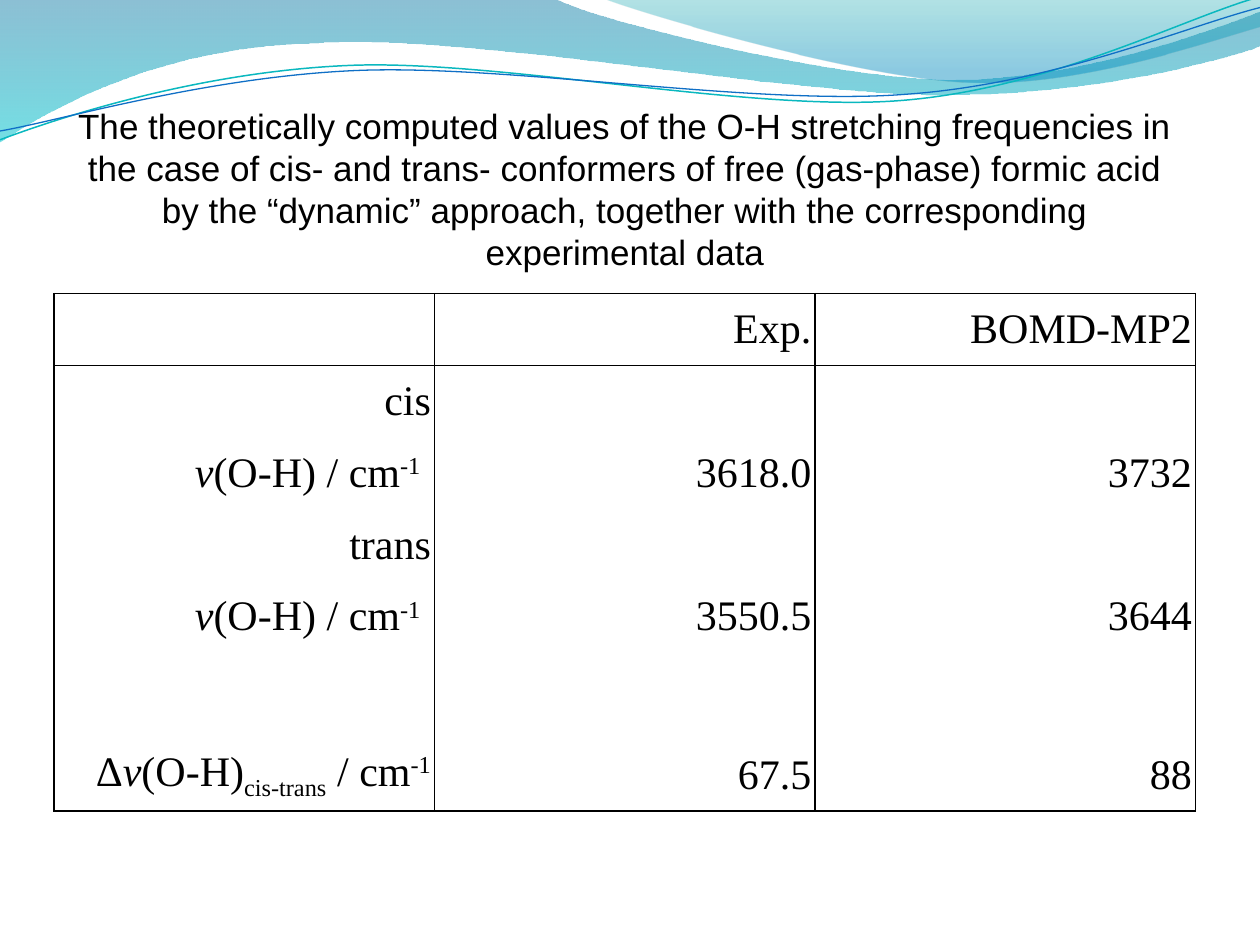
"""Build a slide with a wave header, a title and a table of O-H stretching frequencies."""
from lxml import etree
from pptx import Presentation
from pptx.dml.color import RGBColor
from pptx.enum.text import MSO_ANCHOR, MSO_AUTO_SIZE, PP_ALIGN
from pptx.oxml.ns import qn
from pptx.util import Inches, Pt

TOP, MIDDLE = MSO_ANCHOR.TOP, MSO_ANCHOR.MIDDLE
CENTER, RIGHT = PP_ALIGN.CENTER, PP_ALIGN.RIGHT
NO_AUTOFIT = MSO_AUTO_SIZE.NONE
BLACK = "000000"


def color(hex_string):
    """Turn a hex string into a colour."""
    return RGBColor.from_string(hex_string)


def add_wave(slide, start, segments, close):
    """Add an outline of lines (x, y) and cubic curves (six numbers), in inches."""
    corners = [(Inches(segment[i]), Inches(segment[i + 1]))
               for segment in segments for i in range(0, len(segment), 2)]
    builder = slide.shapes.build_freeform(Inches(start[0]), Inches(start[1]))
    builder.add_line_segments(corners, close=close)
    shape = builder.convert_to_shape()
    shape.shadow.inherit = False
    steps = iter(list(shape._element.iter(qn("a:lnTo"))))
    for segment in segments:
        first = next(steps)
        if len(segment) == 6:
            curve = etree.Element(qn("a:cubicBezTo"))
            first.addprevious(curve)
            for step in (first, next(steps), next(steps)):
                curve.append(step[0])
                step.getparent().remove(step)
    return shape


presentation = Presentation()
presentation.slide_width, presentation.slide_height = Inches(10), Inches(7.5)
slide = presentation.slides.add_slide(presentation.slide_layouts[5])
slide.background.fill.solid()
slide.background.fill.fore_color.rgb = color("FFFFFF")

filled_waves = [
    ((0, 0), [(4.4, -0.01), (4.76, 0.17, 6.64, 0.63, 7.58, 0.63),
              (8.53, 0.63, 9.58, 0.26, 10, 0.09), (10.01, 0.36),
              (9.83, 0.44, 8.7, 0.76, 7.46, 0.75), (6.22, 0.75, 3.82, 0.28, 2.57, 0.34),
              (1.29, 0.36, 0.46, 0.83, -0.01, 1.13)],
     [(0, "0074A1", 45), (1, "00C6CF", 55)]),
    ((4.79, -0.01), [(5.09, 0.11, 6.82, 0.62, 7.69, 0.65),
                     (8.56, 0.69, 9.61, 0.32, 10, 0.21), (10, 0)],
     [(0, "00A1A9", 30), (0.8, "008BBF", 45)]),
]
for start, segments, stops in filled_waves:
    wave = add_wave(slide, start, segments, True)
    wave.line.fill.background()
    wave.fill.gradient()
    wave.fill.gradient_angle = 270
    for stop, (position, hex_string, opacity) in zip(wave.fill.gradient_stops, stops):
        stop.position = position
        stop.color.rgb = color(hex_string)
    stop_colors = wave._element.spPr.iter(qn("a:srgbClr"))
    for stop_color, (position, hex_string, opacity) in zip(stop_colors, stops):
        etree.SubElement(stop_color, qn("a:alpha"), val=str(opacity * 1000))

line_waves = [
    ((0, 1.11), [(0.48, 0.93, 1.58, 0.57, 2.77, 0.52), (3.95, 0.47, 5.93, 0.89, 7.13, 0.8),
                 (8.33, 0.71, 9.38, 0.15, 9.98, -0.02)], "0AB8BF", 0.85),
    ((0, 1.04), [(0.47, 0.96, 1.64, 0.61, 2.83, 0.56), (4.03, 0.51, 5.97, 0.84, 7.17, 0.75),
                 (8.36, 0.67, 9.41, 0.21, 10, 0.06)], "0F6FC6", 0.75),
]
for start, segments, hex_string, width in line_waves:
    wave = add_wave(slide, start, segments, False)
    wave.fill.background()
    wave.line.color.rgb = color(hex_string)
    wave.line.width = Pt(width)

title = slide.shapes.title
title.left, title.top = Inches(0.43), Inches(0.77)
title.width, title.height = Inches(9.06), Inches(1.78)
title_frame = title.text_frame
title_frame.text = (
    "The theoretically computed values of the O-H stretching frequencies in the case of "
    "cis- and trans- conformers of free (gas-phase) formic acid by the “dynamic” approach, "
    "together with the corresponding experimental data")
title_frame.word_wrap = True
title_frame.auto_size = NO_AUTOFIT
title_frame.vertical_anchor = TOP
title_frame.margin_top = Inches(0.06)
paragraph = title_frame.paragraphs[0]
paragraph.alignment = CENTER
paragraph.line_spacing = Pt(24)
paragraph.font.size = Pt(20)
paragraph.font.name = "Arial"
paragraph.font.color.rgb = color(BLACK)

frequency = [("v", "italic"), ("(O-H) / cm", ""), ("-1", "super"), (" ", "")]
difference = [("Δ", ""), ("v", "italic"), ("(O-H)", ""), ("cis-trans", "sub"),
              (" / cm", ""), ("-1", "super")]
rows = [
    ([], "Exp.", "BOMD-MP2"),
    ([("cis", "")], "", ""),
    (frequency, "3618.0", "3732"),
    ([("trans", "")], "", ""),
    (frequency, "3550.5", "3644"),
    ([], "", ""),
    (difference, "67.5", "88"),
]
baselines = {"super": "30000", "sub": "-25000"}
last_row = len(rows) - 1
table = slide.shapes.add_table(len(rows), 3, Inches(0.43), Inches(2.33),
                               Inches(9.06), Inches(4.09)).table
table.first_row = table.horz_banding = False
for column in table.columns:
    column.width = Inches(3.02)
for row_index, (label, experiment, computed) in enumerate(rows):
    table.rows[row_index].height = Inches(0.69 if row_index == 5 else 0.57)
    ruled = {"L": True, "R": True, "T": row_index <= 1, "B": row_index in (0, last_row)}
    for column_index, runs in enumerate((label, [(experiment, "")], [(computed, "")])):
        cell = table.cell(row_index, column_index)
        cell.margin_left = cell.margin_right = Inches(0.03)
        cell.margin_top = cell.margin_bottom = 0
        cell.vertical_anchor = MIDDLE
        cell_properties = cell._tc.get_or_add_tcPr()
        for side, drawn in ruled.items():
            border = etree.SubElement(cell_properties, qn(f"a:ln{side}"), w=str(Pt(1)))
            if drawn:
                border_fill = etree.SubElement(border, qn("a:solidFill"))
                etree.SubElement(border_fill, qn("a:srgbClr"), val=BLACK)
            else:
                etree.SubElement(border, qn("a:noFill"))
        cell.fill.background()
        paragraph = cell.text_frame.paragraphs[0]
        paragraph.alignment = RIGHT
        paragraph.space_before = paragraph.space_after = Pt(1)
        paragraph.font.size = Pt(24)
        paragraph.font.name = "Times New Roman"
        paragraph.font.color.rgb = color(BLACK)
        for text, style in runs:
            if not text:
                continue
            run = paragraph.add_run()
            run.text = text
            if style == "italic":
                run.font.italic = True
            elif style:
                run._r.get_or_add_rPr().set("baseline", baselines[style])

presentation.save("out.pptx")
